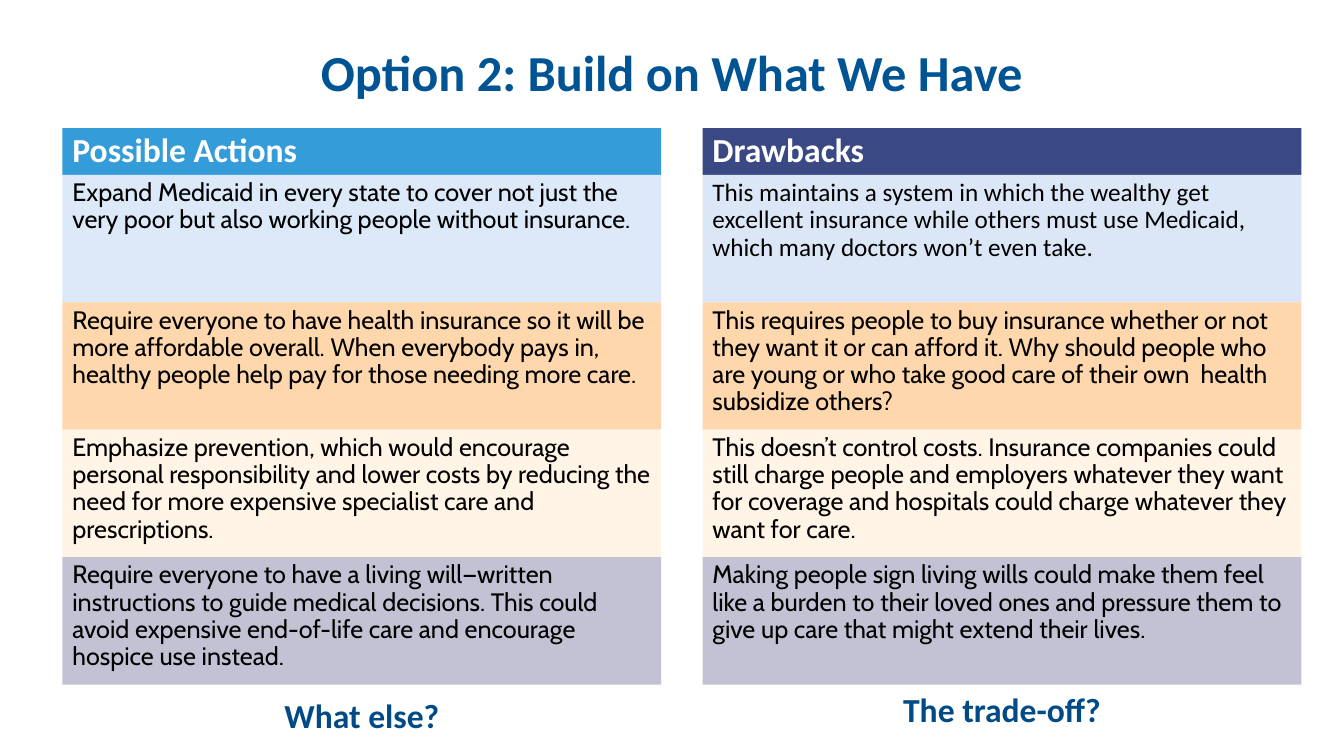
from lxml import etree
from pptx import Presentation
from pptx import util as u
from pptx.dml.color import RGBColor
from pptx.enum import shapes, text
from pptx.oxml.ns import qn

COLORS = {
    "title": "005493", "closing": "004A85", "white": "FFFFFF", "black": "000000",
    "actions": "359CDA", "drawbacks": "273777",
    "sky": "DCE9F8", "pale_sky": "DBE7F6",
    "orange": "FFD7AC", "cream": "FFF4E6", "lavender": "C3C2D4",
}
TITLE = "Option 2: Build on What We Have"
COLUMNS = [
    {
        "left": 44.64, "heading": "Possible Actions", "fill": "actions", "opacity": 100,
        "closing": "What else?", "closing_top": 492.5,
        "rows": [
            ("sky", "Cabin", "Expand Medicaid in every state to cover not just the very poor but also "
             "working people without insurance."),
            ("orange", "Cabin", "Require everyone to have health insurance so it will be more affordable "
             "overall. When everybody pays in, healthy people help pay for those needing more care."),
            ("cream", "Cabin", "Emphasize prevention, which would encourage personal responsibility and "
             "lower costs by reducing the need for more expensive specialist care and prescriptions."),
            ("lavender", "Cabin", "Require everyone to have a living will—written instructions to guide "
             "medical decisions. This could avoid expensive end-of-life care and encourage hospice use "
             "instead."),
        ],
    },
    {
        "left": 501.84, "heading": "Drawbacks", "fill": "drawbacks", "opacity": 91,
        "closing": "The trade-off?", "closing_top": 488.9,
        "rows": [
            ("pale_sky", "Calibri", "This maintains a system in which the wealthy get excellent insurance "
             "while others must use Medicaid, which many doctors won’t even take."),
            ("orange", "Cabin", "This requires people to buy insurance whether or not they want it or can "
             "afford it. Why should people who are young or who take good care of their own  health "
             "subsidize others?"),
            ("cream", "Cabin", "This doesn’t control costs. Insurance companies could still charge people "
             "and employers whatever they want for coverage and hospitals could charge whatever they "
             "want for care."),
            ("lavender", "Cabin", "Making people sign living wills could make them feel like a burden to "
             "their loved ones and pressure them to give up care that might extend their lives."),
        ],
    },
]
COLUMN_WIDTH = 427.68
HEADING_TOP, HEADING_HEIGHT = 91.5, 33.5
ROWS_TOP, ROW_HEIGHT = 125, 91
CLOSING_HEIGHT = 36


def write(box, words, font, size, color, bold=False, align=text.PP_ALIGN.LEFT,
          anchor=text.MSO_ANCHOR.TOP, spacing=0.9, before=0):
    frame = box.text_frame
    frame.text = words
    frame.word_wrap = True
    frame.auto_size = text.MSO_AUTO_SIZE.NONE
    frame.vertical_anchor = anchor
    para = frame.paragraphs[0]
    para.alignment = align
    para.line_spacing = spacing
    para.space_before = u.Pt(before)
    para.font.name = font
    para.font.size = u.Pt(size)
    para.font.bold = bold
    para.font.color.rgb = RGBColor.from_string(COLORS[color])


def add_panel(page, left, top, height, fill, opacity=100):
    panel = page.shapes.add_shape(shapes.MSO_SHAPE.RECTANGLE, u.Pt(left), u.Pt(top),
                                  u.Pt(COLUMN_WIDTH), u.Pt(height))
    panel.shadow.inherit = False
    panel.line.fill.background()
    panel.fill.solid()
    panel.fill.fore_color.rgb = RGBColor.from_string(COLORS[fill])
    if opacity < 100:
        color = panel.fill._xPr.find(qn("a:solidFill"))[0]
        etree.SubElement(color, qn("a:alpha")).set("val", str(opacity * 1000))
    return panel


def add_column(page, column):
    left = column["left"]
    heading = add_panel(page, left, HEADING_TOP, HEADING_HEIGHT, column["fill"], column["opacity"])
    write(heading, column["heading"], "Calibri", 24, "white", bold=True,
          anchor=text.MSO_ANCHOR.BOTTOM, before=10)
    for index, (fill, font, words) in enumerate(column["rows"]):
        panel = add_panel(page, left, ROWS_TOP + index * ROW_HEIGHT, ROW_HEIGHT, fill)
        write(panel, words, font, 18, "black", before=10)
    closing = page.shapes.add_textbox(u.Pt(left), u.Pt(column["closing_top"]),
                                      u.Pt(COLUMN_WIDTH), u.Pt(CLOSING_HEIGHT))
    write(closing, column["closing"], "Calibri", 24, "closing", bold=True,
          align=text.PP_ALIGN.CENTER, spacing=1.0)


def main():
    deck = Presentation()
    deck.slide_width, deck.slide_height = u.Pt(960), u.Pt(540)
    page = deck.slides.add_slide(deck.slide_layouts[5])
    title = page.shapes.title
    title.left, title.top, title.width, title.height = map(u.Pt, (66, 29, 828, 50))
    write(title, TITLE, "Calibri", 36, "title", bold=True,
          align=text.PP_ALIGN.CENTER, anchor=text.MSO_ANCHOR.MIDDLE)
    for column in COLUMNS:
        add_column(page, column)
    deck.save("out.pptx")


if __name__ == "__main__":
    main()
